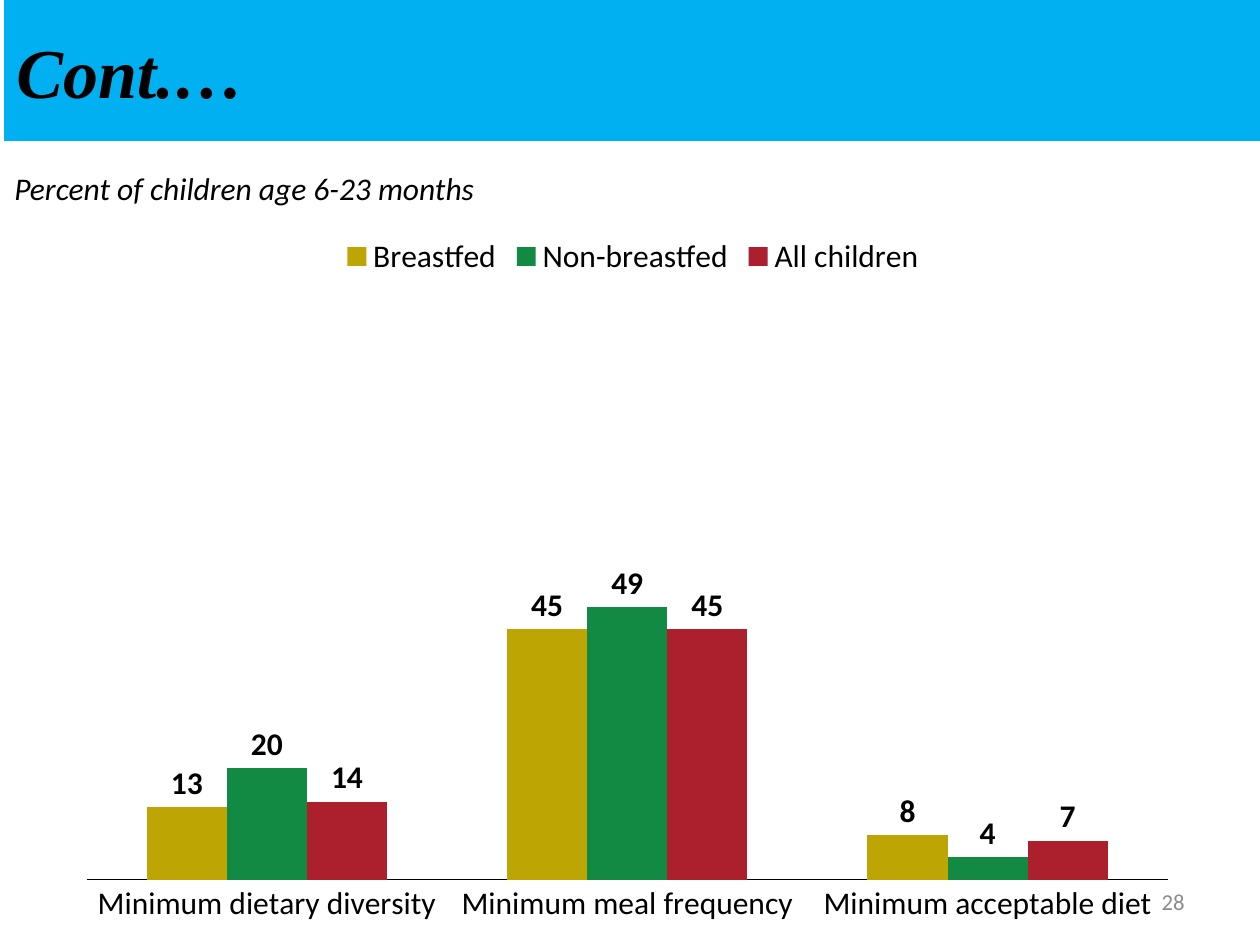
from lxml import etree
from pptx import Presentation
from pptx.chart.data import CategoryChartData
from pptx.dml.color import RGBColor
from pptx.enum.chart import XL_CHART_TYPE, XL_LABEL_POSITION, XL_LEGEND_POSITION, XL_TICK_MARK
from pptx.enum.shapes import MSO_SHAPE
from pptx.enum.text import MSO_ANCHOR, PP_ALIGN
from pptx.oxml import parse_xml
from pptx.oxml.ns import nsdecls
from pptx.util import Emu, Pt

COLUMNS = XL_CHART_TYPE.COLUMN_CLUSTERED
OUTSIDE_END = XL_LABEL_POSITION.OUTSIDE_END
LEGEND_TOP = XL_LEGEND_POSITION.TOP
NO_TICK = XL_TICK_MARK.NONE
RECTANGLE = MSO_SHAPE.RECTANGLE
TOP, MIDDLE = MSO_ANCHOR.TOP, MSO_ANCHOR.MIDDLE
LEFT, RIGHT = PP_ALIGN.LEFT, PP_ALIGN.RIGHT

BLACK = RGBColor(0x00, 0x00, 0x00)
GREY = RGBColor(0x8C, 0x8C, 0x8C)
SKY = RGBColor(0x00, 0xB0, 0xF0)
OCHRE = RGBColor(0xBD, 0xA6, 0x03)
GREEN = RGBColor(0x13, 0x8A, 0x44)
CRIMSON = RGBColor(0xAC, 0x1F, 0x2D)

TITLE = "Cont.…"
SUBTITLE = "Percent of children age 6-23 months"
PAGE_NUMBER = "28"
CATEGORIES = ["Minimum dietary diversity", "Minimum meal frequency", "Minimum acceptable diet"]
SERIES = [
    ("Breastfed", [13, 45, 8], OCHRE),
    ("Non-breastfed", [20, 49, 4], GREEN),
    ("All children", [14, 45, 7], CRIMSON),
]

SLIDE_SIZE = (1260, 945)
TITLE_BOX = (4, 0, 1256, 141)
SUBTITLE_BOX = (2, 163, 1260, 50)
NUMBER_BOX = (903, 876, 294, 50)
CHART_BOX = (64, 222, 1138, 723)
PLOT_AREA = {"x": 0.02, "y": 0.14, "w": 0.95, "h": 0.77}
EMU_PER_PX = 914400 / 126


def px(*lengths):
    return [Emu(round(length * EMU_PER_PX)) for length in lengths]


def style_font(font, size, color=BLACK, name="Calibri", bold=False, italic=False):
    font.name, font.size, font.bold, font.italic = name, Pt(size), bold, italic
    font.color.rgb = color


def write_text(shape, text, anchor, alignment, **font_style):
    frame = shape.text_frame
    frame.word_wrap = True
    frame.vertical_anchor = anchor
    paragraph = frame.paragraphs[0]
    paragraph.alignment = alignment
    run = paragraph.add_run()
    run.text = text
    style_font(run.font, **font_style)


def set_plot_layout(chart):
    plot_area = chart.plots[0]._element.getparent()
    for old_layout in plot_area.findall("{*}layout"):
        plot_area.remove(old_layout)
    layout = parse_xml(f"<c:layout {nsdecls('c')}><c:manualLayout/></c:layout>")
    settings = {"layoutTarget": "inner", "xMode": "edge", "yMode": "edge", **PLOT_AREA}
    namespace = etree.QName(layout).namespace
    for tag, value in settings.items():
        etree.SubElement(layout[0], f"{{{namespace}}}{tag}", val=str(value))
    plot_area.insert(0, layout)


def add_children_chart(slide):
    data = CategoryChartData()
    data.categories = CATEGORIES
    for name, values, _ in SERIES:
        data.add_series(name, values)
    chart = slide.shapes.add_chart(COLUMNS, *px(*CHART_BOX), data).chart
    chart.has_title = False
    style_font(chart.font, 10)

    chart.has_legend = True
    chart.legend.position = LEGEND_TOP
    chart.legend.include_in_layout = False
    style_font(chart.legend.font, 18)

    value_axis = chart.value_axis
    value_axis.minimum_scale, value_axis.maximum_scale = 0, 100
    value_axis.has_major_gridlines = False
    value_axis.visible = False
    category_axis = chart.category_axis
    category_axis.major_tick_mark = NO_TICK
    category_axis.format.line.color.rgb = BLACK
    category_axis.format.line.width = Pt(0.75)
    style_font(category_axis.tick_labels.font, 18)

    plot = chart.plots[0]
    plot.gap_width, plot.overlap = 150, 0
    plot.vary_by_categories = False
    for series, (_, _, color) in zip(plot.series, SERIES):
        series.format.fill.solid()
        series.format.fill.fore_color.rgb = color
        labels = series.data_labels
        labels.show_value = True
        labels.position = OUTSIDE_END
        style_font(labels.font, 18, bold=True)
    set_plot_layout(chart)


def main():
    """Build the slide on child feeding practices."""
    presentation = Presentation()
    presentation.slide_width, presentation.slide_height = px(*SLIDE_SIZE)
    slide = presentation.slides.add_slide(presentation.slide_layouts[6])

    banner = slide.shapes.add_shape(RECTANGLE, *px(*TITLE_BOX))
    banner.shadow.inherit = False
    banner.fill.solid()
    banner.fill.fore_color.rgb = SKY
    banner.line.fill.background()
    write_text(banner, TITLE, MIDDLE, LEFT, size=40, name="Times New Roman", bold=True, italic=True)

    add_children_chart(slide)

    subtitle = slide.shapes.add_textbox(*px(*SUBTITLE_BOX))
    write_text(subtitle, SUBTITLE, TOP, LEFT, size=18, italic=True)
    page_number = slide.shapes.add_textbox(*px(*NUMBER_BOX))
    write_text(page_number, PAGE_NUMBER, MIDDLE, RIGHT, size=13, color=GREY)

    presentation.save("out.pptx")


if __name__ == "__main__":
    main()
